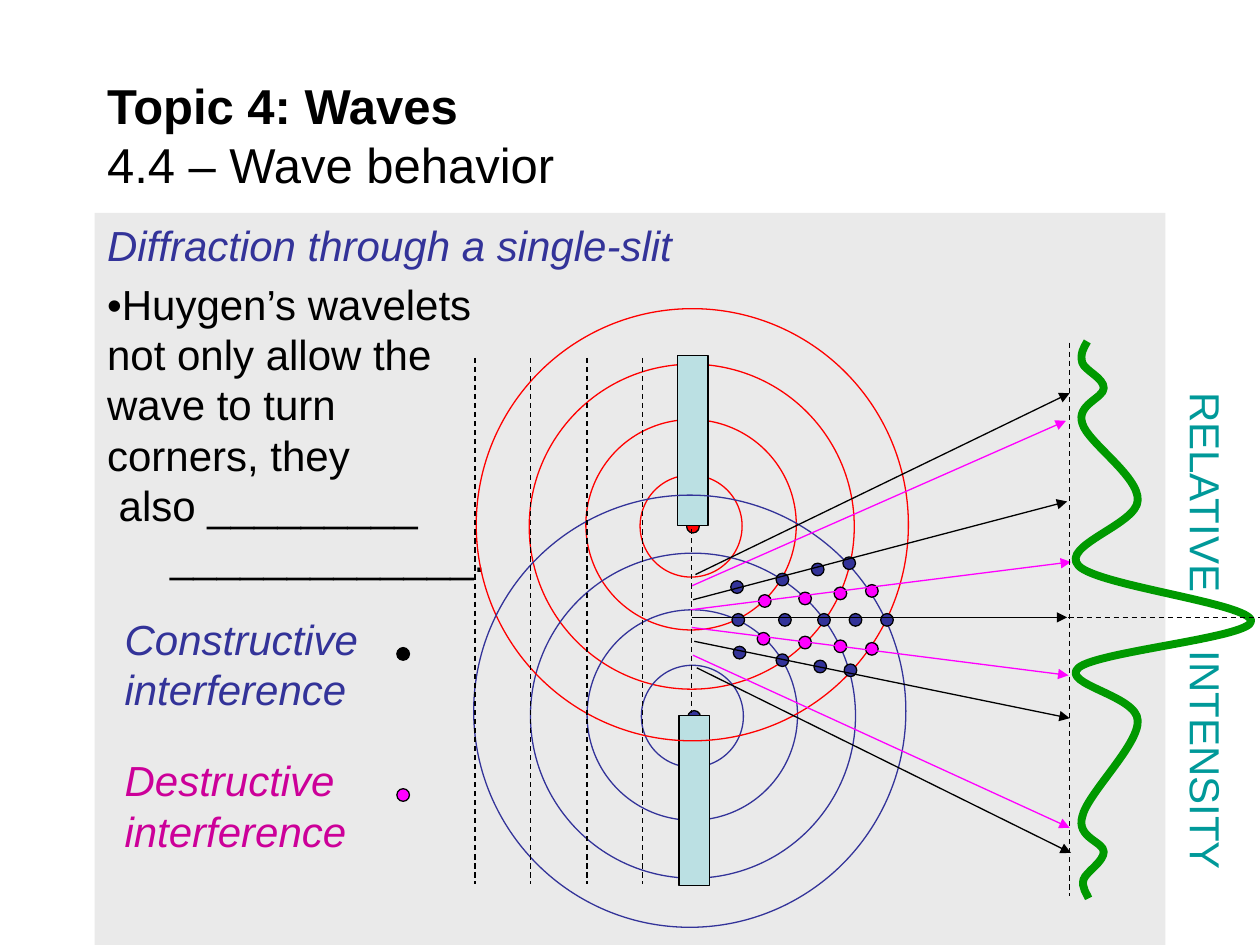
import copy
import dataclasses
import pptx
import pptx.dml.color
import pptx.enum.dml
import pptx.enum.shapes
import pptx.enum.text
import pptx.oxml.ns
import pptx.util
from lxml import etree

Inches = pptx.util.Inches
SHAPE = pptx.enum.shapes.MSO_SHAPE
ALIGN = pptx.enum.text.PP_ALIGN
ANCHOR = pptx.enum.text.MSO_ANCHOR
AUTO_SIZE = pptx.enum.text.MSO_AUTO_SIZE
qn = pptx.oxml.ns.qn


@dataclasses.dataclass(frozen=True)
class Theme:
    """Colours, font and sizes of the slide."""
    font: str = "Arial"
    title: int = 28
    body: int = 24
    thin: float = 0.75
    thick: float = 4.5
    dot: float = 0.1
    black: str = "000000"
    panel: str = "EAEAEA"
    blue: str = "333399"
    red: str = "FF0000"
    magenta: str = "FF00FF"
    plum: str = "CC0099"
    barrier: str = "BBE0E3"
    green: str = "009900"
    teal: str = "009999"


THEME = Theme()

RED_RINGS = [(5.08, 3.77, 0.81), (4.65, 3.33, 1.67), (4.2, 2.89, 2.58)]
BLUE_RINGS = [(5.09, 5.28, 0.81), (4.66, 4.84, 1.67), (4.21, 4.39, 2.58)]
CONSTRUCTIVE = [(5.81, 4.87), (6.18, 4.87), (6.49, 4.87), (6.74, 4.87), (6.99, 4.87),
                (5.8, 4.61), (6.16, 4.55), (6.44, 4.47), (6.69, 4.42),
                (5.82, 5.13), (6.16, 5.19), (6.46, 5.24), (6.7, 5.27)]
DESTRUCTIVE = [(6.02, 4.72), (6.34, 4.7), (6.62, 4.66), (6.87, 4.64),
               (6.01, 5.02), (6.34, 5.05), (6.62, 5.08), (6.87, 5.1)]
BRIGHT_RAYS = [(5.49, 4.9, 8.47, 4.9), (5.5, 4.76, 8.47, 3.98), (5.51, 5.09, 8.49, 5.7),
               (5.52, 4.56, 8.49, 3.12), (5.53, 5.3, 8.5, 6.77)]
DARK_RAYS = [(5.48, 4.84, 8.5, 4.46), (5.49, 4.65, 8.46, 3.34),
             (5.49, 4.98, 8.48, 5.36), (5.5, 5.2, 8.49, 6.57)]
INTENSITY = [(8.63, 2.71),
             (8.6, 2.76), (8.57, 2.81), (8.59, 2.88), (8.61, 2.94), (8.76, 3), (8.76, 3.08),
             (8.76, 3.16), (8.54, 3.21), (8.59, 3.36), (8.63, 3.51), (9.04, 3.78), (9.03, 3.97),
             (9.03, 4.16), (8.41, 4.33), (8.56, 4.49), (8.71, 4.65), (9.93, 4.79), (9.93, 4.93),
             (9.93, 5.06), (8.71, 5.17), (8.56, 5.3), (8.41, 5.43), (9.03, 5.52), (9.03, 5.72),
             (9.04, 5.91), (8.63, 6.3), (8.59, 6.48), (8.54, 6.65), (8.76, 6.68), (8.76, 6.76),
             (8.76, 6.84), (8.62, 6.92), (8.6, 6.98), (8.58, 7.04), (8.63, 7.1), (8.64, 7.13)]


def rgb(colour):
    """Turn a hex string into a colour."""
    return pptx.dml.color.RGBColor.from_string(colour)


def place(element, left, top, width, height):
    """Move and size an element in inches."""
    element.left, element.top = Inches(left), Inches(top)
    element.width, element.height = Inches(width), Inches(height)


def write(paragraph, text, size, colour, bold=False, italic=False):
    """Add one formatted run."""
    run = paragraph.add_run()
    run.text = text
    run.font.name, run.font.size = THEME.font, pptx.util.Pt(size)
    run.font.bold, run.font.italic = bold, italic
    run.font.color.rgb = rgb(colour)


def break_line(paragraph):
    """Break the line in the format of the last run."""
    properties = paragraph.runs[-1]._r.rPr
    paragraph.add_line_break()
    paragraph._p[-1].append(copy.deepcopy(properties))


def add_tab_stop(paragraph, position):
    """Set one left tab stop."""
    stops = etree.SubElement(paragraph._p.get_or_add_pPr(), qn("a:tabLst"))
    etree.SubElement(stops, qn("a:tab"), pos=str(Inches(position)), algn="l")


def outline(line, colour, width=THEME.thin):
    """Colour a line and set its width."""
    line.color.rgb, line.width = rgb(colour), pptx.util.Pt(width)


def add_figure(shapes, kind, box, line, fill=None):
    """Add an outlined preset shape, filled or hollow."""
    figure = shapes.add_shape(kind, *map(Inches, box))
    figure.shadow.inherit = False
    outline(figure.line, line)
    if fill:
        figure.fill.solid()
        figure.fill.fore_color.rgb = rgb(fill)
    else:
        figure.fill.background()


def add_ring(shapes, left, top, diameter, colour):
    """Add a hollow wavelet."""
    add_figure(shapes, SHAPE.OVAL, (left, top, diameter, diameter), colour)


def add_dot(shapes, corner, fill):
    """Add a small filled marker."""
    add_figure(shapes, SHAPE.OVAL, (*corner, THEME.dot, THEME.dot), THEME.black, fill)


def add_line(shapes, ends, colour, arrow=False):
    """Add a solid arrow or a dashed line."""
    connector = shapes.add_connector(pptx.enum.shapes.MSO_CONNECTOR.STRAIGHT, *map(Inches, ends))
    outline(connector.line, colour)
    if arrow:
        etree.SubElement(connector.line._get_or_add_ln(), qn("a:tailEnd"), type="triangle")
    else:
        connector.line.dash_style = pptx.enum.dml.MSO_LINE.DASH
    etree.SubElement(connector._element.spPr, qn("a:effectLst"))


def add_curve(shapes, points, colour):
    """Add a thick open curve through a chain of cubic control points."""
    builder = shapes.build_freeform(*map(Inches, points[0]))
    builder.add_line_segments([tuple(map(Inches, point)) for point in points[1:]], close=False)
    curve = builder.convert_to_shape()
    segments = list(curve._element.iter(qn("a:lnTo")))
    for first in range(0, len(segments), 3):
        group = segments[first:first + 3]
        cubic = etree.Element(qn("a:cubicBezTo"))
        group[0].addprevious(cubic)
        for segment in group:
            cubic.append(segment[0])
            segment.getparent().remove(segment)
    curve.shadow.inherit = False
    curve.fill.background()
    outline(curve.line, colour, THEME.thick)


def add_label(shapes, box, text, colour, italic=False):
    """Add a text box and return it."""
    label = shapes.add_textbox(*map(Inches, box))
    label.text_frame.word_wrap = True
    label.text_frame.auto_size = AUTO_SIZE.SHAPE_TO_FIT_TEXT
    write(label.text_frame.paragraphs[0], text, THEME.body, colour, italic=italic)
    return label


def add_legend(shapes, top, text, colour, dot_colour):
    """Add a grouped legend entry."""
    entry = shapes.add_group_shape().shapes
    add_dot(entry, (3.15, top + 0.32), dot_colour)
    add_label(entry, (0.89, top, 2.49, 0.9), text, colour, italic=True)


def fill_title(title):
    """Write the topic and section."""
    place(title, 0.75, 0.58, 8.5, 0.98)
    title.text_frame.vertical_anchor = ANCHOR.MIDDLE
    heading = title.text_frame.paragraphs[0]
    heading.alignment = ALIGN.LEFT
    write(heading, "Topic 4: Waves", THEME.title, THEME.black, bold=True)
    break_line(heading)
    write(heading, "4.4 – Wave behavior", THEME.title, THEME.black)


def fill_panel(panel):
    """Write the explanation on the grey panel."""
    place(panel, 0.75, 1.69, 8.5, 5.81)
    panel.fill.solid()
    panel.fill.fore_color.rgb = rgb(THEME.panel)
    frame = panel.text_frame
    frame.vertical_anchor = ANCHOR.TOP
    frame.auto_size = AUTO_SIZE.NONE
    heading, wavelets = frame.paragraphs[0], frame.add_paragraph()
    for paragraph, space in ((heading, 0), (wavelets, 4.8)):
        paragraph.alignment, paragraph.space_before = ALIGN.LEFT, pptx.util.Pt(space)
    write(heading, "Diffraction through a single-slit", THEME.body, THEME.blue, italic=True)
    add_tab_stop(wavelets, 0.37)
    write(wavelets, "•Huygen’s wavelets", THEME.body, THEME.black)
    for line in ("not only allow the", "wave to turn", "corners, they",
                 " also " + "_" * 9, "\t" + "_" * 13 + "."):
        break_line(wavelets)
        write(wavelets, line, THEME.body, THEME.black)


def add_diffraction(shapes):
    """Draw the slit, wavelets, rays and intensity curve."""
    for rings, edge, colour in ((RED_RINGS, (5.45, 4.13), THEME.red), (BLUE_RINGS, (5.46, 5.64), THEME.blue)):
        for ring in rings:
            add_ring(shapes, *ring, colour)
        add_dot(shapes, edge, colour)
    for left, top in ((5.38, 2.82), (5.39, 5.68)):
        add_figure(shapes, SHAPE.RECTANGLE, (left, top, 0.24, 1.35), THEME.black, THEME.barrier)
    add_ring(shapes, 3.78, 2.45, 3.43, THEME.red)
    add_ring(shapes, 3.76, 3.93, 3.43, THEME.blue)
    for corners, colour in ((CONSTRUCTIVE, THEME.blue), (DESTRUCTIVE, THEME.magenta)):
        for corner in corners:
            add_dot(shapes, corner, colour)
    for rays, colour in ((BRIGHT_RAYS, THEME.black), (DARK_RAYS, THEME.magenta)):
        for ray in rays:
            add_line(shapes, ray, colour, arrow=True)
    add_curve(shapes, INTENSITY, THEME.green)
    wavefronts = [(x, 2.84, x, 7.02) for x in (3.77, 4.21, 4.66, 5.1)]
    for ends in [(8.49, 2.72, 8.49, 7.11), (8.48, 4.9, 10, 4.9), (5.49, 4.2, 5.49, 5.66)] + wavefronts:
        add_line(shapes, ends, THEME.black)


def main():
    """Build and save the slide."""
    deck = pptx.Presentation()
    deck.slide_width, deck.slide_height = Inches(10), Inches(7.5)
    slide = deck.slides.add_slide(deck.slide_layouts[0])
    fill_title(slide.shapes.title)
    fill_panel(slide.placeholders[1])
    add_diffraction(slide.shapes)
    add_legend(slide.shapes, 4.82, "Constructive interference", THEME.blue, THEME.black)
    add_legend(slide.shapes, 5.94, "Destructive interference", THEME.plum, THEME.magenta)
    axis = add_label(slide.shapes, (7.57, 4.77, 4.01, 0.5), "RELATIVE\tINTENSITY", THEME.teal)
    axis.rotation = 90
    axis.text_frame.margin_right = 0
    add_tab_stop(axis.text_frame.paragraphs[0], 2.05)
    deck.save("out.pptx")


if __name__ == "__main__":
    main()
